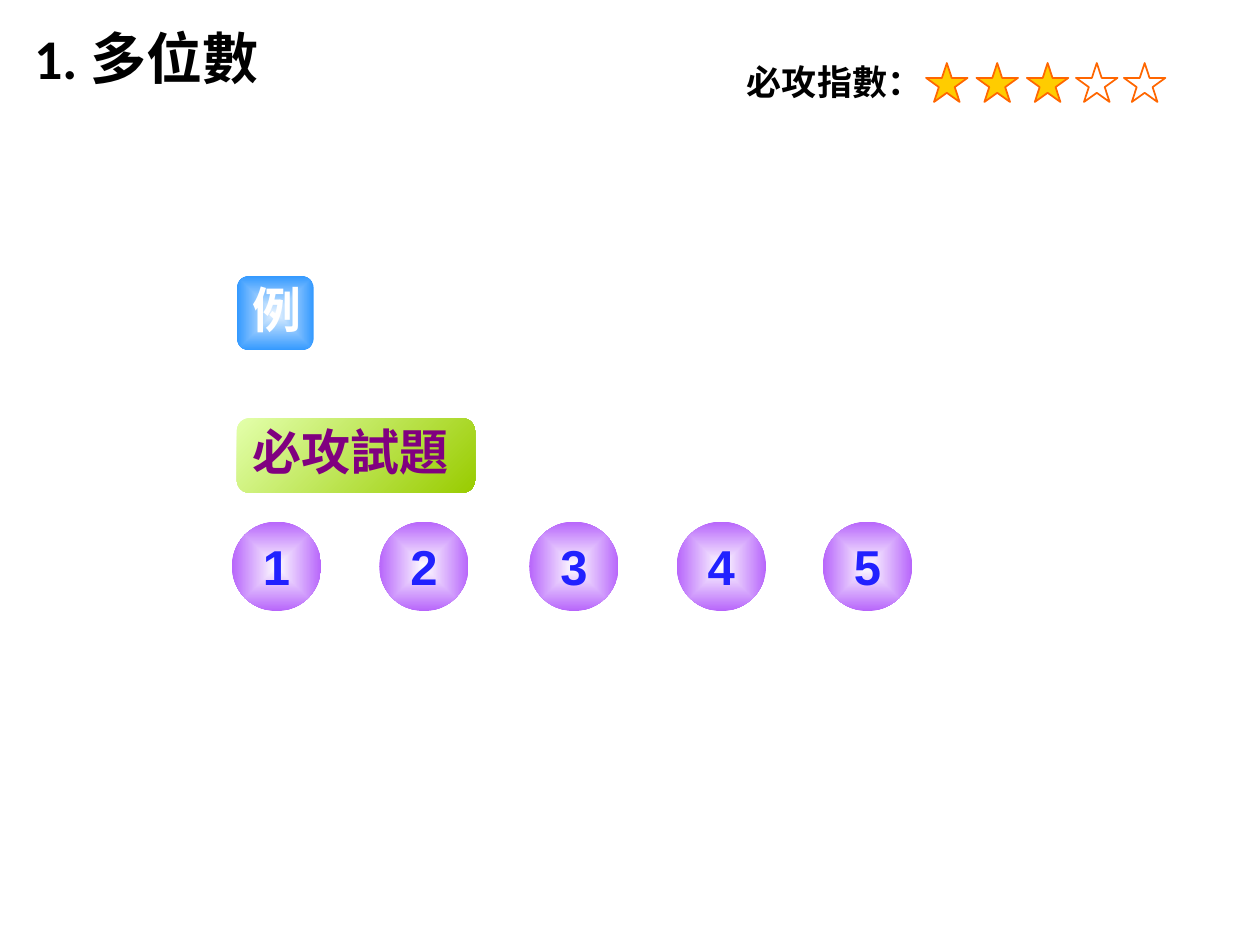
"""Build the 多位數 menu slide with its star rating and question buttons."""
from dataclasses import dataclass
from typing import Optional

from lxml import etree
from pptx import Presentation
from pptx import util as u
from pptx.dml.color import RGBColor
from pptx.enum import shapes, text
from pptx.oxml import ns

TC, SC = "Noto Sans CJK TC", "Noto Sans CJK SC"


@dataclass
class Button:
    label: str
    left: float
    top: float
    width: float
    height: float
    inner: str
    outer: str
    color: str
    font: str = SC
    kind: shapes.MSO_SHAPE = shapes.MSO_SHAPE.ROUNDED_RECTANGLE
    align: text.PP_ALIGN = text.PP_ALIGN.CENTER
    radial: bool = True
    spacing: Optional[int] = 30


@dataclass
class Star:
    left: float
    fill: str


def rgb(value: str) -> RGBColor:
    return RGBColor.from_string(value)


def add_run(p, words: str, size: int, font: str, color: str) -> None:
    r = p.add_run()
    r.text = words
    r.font.size, r.font.bold, r.font.name = u.Pt(size), True, font
    r.font.color.rgb = rgb(color)
    ea = etree.SubElement(r.font._element, ns.qn("a:ea"))
    ea.set("typeface", font)


def set_gradient(sp, inner: str, outer: str, radial: bool) -> None:
    sp.fill.gradient()
    for stop, color in zip(sp.fill.gradient_stops, (inner, outer)):
        stop.color.rgb = rgb(color)
    sp.fill.gradient_angle = 315
    if radial:
        lin = sp._element.spPr.find(".//" + ns.qn("a:lin"))
        path = etree.Element(ns.qn("a:path"), {"path": "rect"})
        sides = {side: "50000" for side in "ltrb"}
        etree.SubElement(path, ns.qn("a:fillToRect"), sides)
        lin.getparent().replace(lin, path)


def add_star(s, star: Star) -> None:
    sp = s.shapes.add_shape(shapes.MSO_SHAPE.STAR_5_POINT, u.Inches(star.left),
                            u.Inches(0.5), u.Inches(0.33), u.Inches(0.31))
    sp.shadow.inherit = False
    sp.fill.solid()
    sp.fill.fore_color.rgb = rgb(star.fill)
    sp.line.color.rgb = rgb("FF6600")
    sp.line.width = u.Pt(1)


def add_button(s, b: Button) -> None:
    sp = s.shapes.add_shape(b.kind, u.Inches(b.left), u.Inches(b.top),
                            u.Inches(b.width), u.Inches(b.height))
    sp.shadow.inherit = False
    sp.line.fill.background()
    set_gradient(sp, b.inner, b.outer, b.radial)
    tf = sp.text_frame
    p = tf.paragraphs[0]
    p.alignment = b.align
    tf.word_wrap = b.spacing is not None
    if b.spacing:
        tf.vertical_anchor = text.MSO_ANCHOR.TOP
        p.line_spacing = u.Pt(b.spacing)
    else:
        tf.vertical_anchor = text.MSO_ANCHOR.MIDDLE
    add_run(p, b.label, 28, b.font, b.color)


def add_title(s) -> None:
    sp = s.shapes.title
    sp.left, sp.top = u.Inches(0.17), u.Inches(0.14)
    sp.width, sp.height = u.Inches(6.56), u.Inches(0.82)
    tf = sp.text_frame
    tf.vertical_anchor = text.MSO_ANCHOR.TOP
    p = tf.paragraphs[0]
    p.alignment = text.PP_ALIGN.LEFT
    add_run(p, "1. ", 32, "Calibri", "000000")
    add_run(p, "多位數", 32, TC, "000000")


def add_rating_label(s) -> None:
    sp = s.shapes.add_textbox(u.Inches(5.83), u.Inches(0.43),
                              u.Inches(1.89), u.Inches(0.46))
    tf = sp.text_frame
    tf.word_wrap = True
    add_run(tf.paragraphs[0], "必攻指數：", 20, TC, "000000")


STARS = [Star(left, "FFCC00") for left in (7.35, 7.75, 8.15)]
STARS += [Star(left, "FFFFFF") for left in (8.54, 8.92)]

BUTTONS = [
    Button("例", 1.88, 2.19, 0.61, 0.59, "E5F2FF", "3399FF", "FFFFFF"),
    Button("必攻試題", 1.88, 3.32, 1.89, 0.59, "E3FFAB", "99CC00", "800080",
           align=text.PP_ALIGN.LEFT, radial=False),
]
BUTTONS += [
    Button(str(number), left, 4.14, 0.71, 0.71, "FFFFFF", "B765FB", "2121FF",
           font="Arial", kind=shapes.MSO_SHAPE.OVAL, spacing=None)
    for number, left in enumerate((1.84, 3.01, 4.2, 5.37, 6.53), start=1)
]


def main() -> None:
    prs = Presentation()
    prs.slide_width, prs.slide_height = u.Inches(10), u.Inches(7.5)
    s = prs.slides.add_slide(prs.slide_layouts[5])
    add_title(s)
    add_rating_label(s)
    for star in STARS:
        add_star(s, star)
    for button in BUTTONS:
        add_button(s, button)
    prs.save("out.pptx")


if __name__ == "__main__":
    main()
